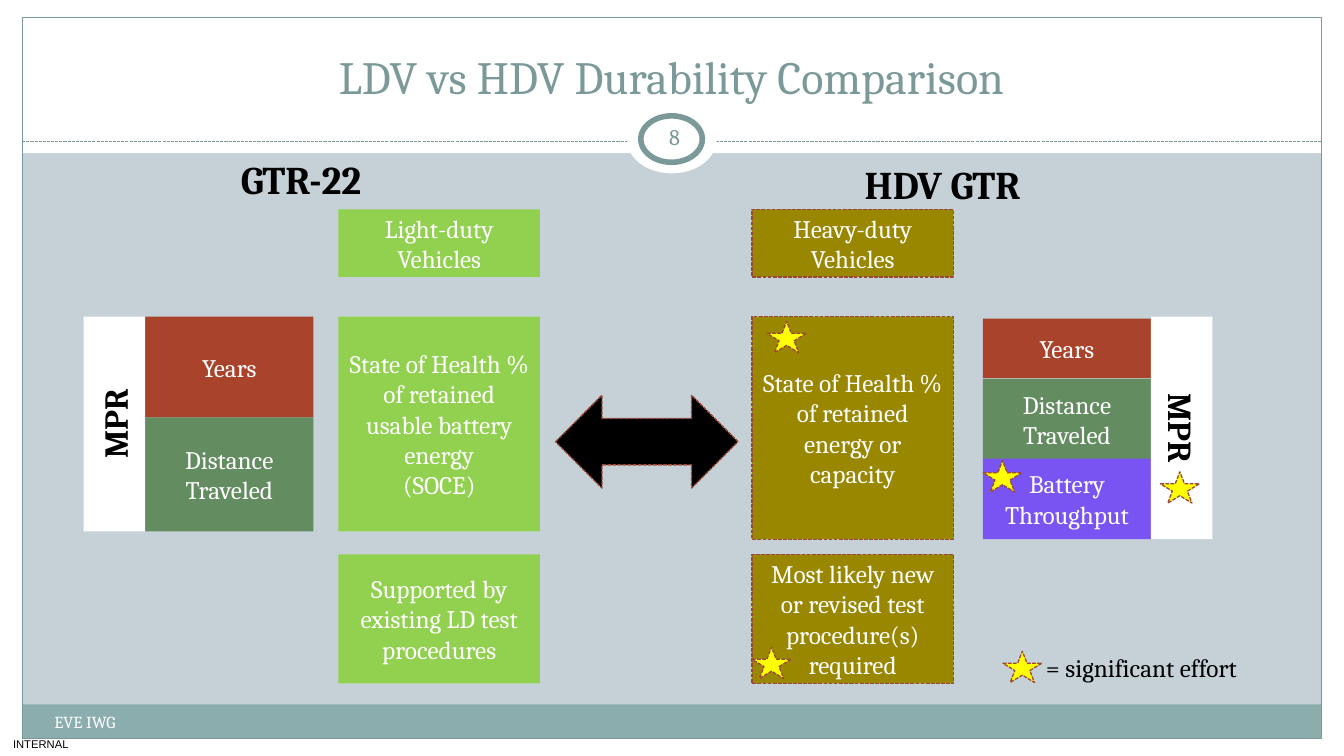
from dataclasses import dataclass

from lxml.etree import SubElement
from pptx import Presentation
from pptx.dml.color import RGBColor
from pptx.enum.dml import MSO_LINE
from pptx.enum.shapes import MSO_CONNECTOR, MSO_SHAPE
from pptx.enum.text import MSO_ANCHOR, MSO_AUTO_SIZE, PP_ALIGN
from pptx.oxml.ns import qn
from pptx.util import Cm, Pt


@dataclass(frozen=True)
class Theme:
    font: str = "Cambria"
    label_font: str = "Arial"
    backdrop: str = "C5D1D7"
    white: str = "FFFFFF"
    black: str = "000000"
    teal: str = "7C999A"
    band: str = "8CADAE"
    red: str = "A9432B"
    green: str = "648C61"
    purple: str = "7A54F2"
    light_duty: str = "92D050"
    heavy_duty: str = "998700"
    outline: str = "9B4936"
    star: str = "FFFF00"
    title_size: float = 33
    heading_size: float = 28
    mpr_size: float = 24
    body_size: float = 18
    number_size: float = 16
    footer_size: float = 12
    label_size: float = 8
    hairline: float = 0.75
    dash: float = 0.9
    ring: float = 4


class SlideBuilder:
    def __init__(self, slide, theme):
        self.slide = slide
        self.theme = theme
        slide.background.fill.solid()
        slide.background.fill.fore_color.rgb = RGBColor.from_string(theme.backdrop)

    def set_text(self, shape, text, size, color, bold=False, align=PP_ALIGN.CENTER,
                 anchor=MSO_ANCHOR.MIDDLE, font=None, wrap=True):
        frame = shape.text_frame
        frame.text = text
        frame.word_wrap = wrap
        frame.auto_size = MSO_AUTO_SIZE.NONE
        frame.vertical_anchor = anchor
        for paragraph in frame.paragraphs:
            paragraph.alignment = align
            for run in paragraph.runs:
                run.font.name = font or self.theme.font
                run.font.size = Pt(size)
                run.font.bold = bold
                run.font.color.rgb = RGBColor.from_string(color)

    def stroke(self, line, color, width, dashed):
        line.color.rgb = RGBColor.from_string(color)
        line.width = Pt(width)
        if dashed:
            line.dash_style = MSO_LINE.SQUARE_DOT

    def title(self, text, box):
        title = self.slide.shapes.title
        title.left, title.top, title.width, title.height = map(Cm, box)
        self.set_text(title, text, self.theme.title_size, self.theme.teal,
                      anchor=MSO_ANCHOR.BOTTOM)
        self.slide.shapes._spTree.append(title._element)

    def shape(self, kind, box, fill=None, line=None, width=None, dashed=False):
        shape = self.slide.shapes.add_shape(kind, *map(Cm, box))
        shape.shadow.inherit = False
        if fill:
            shape.fill.solid()
            shape.fill.fore_color.rgb = RGBColor.from_string(fill)
        else:
            shape.fill.background()
        if line:
            self.stroke(shape.line, line, width or self.theme.hairline, dashed)
        else:
            shape.line.fill.background()
        return shape

    def dashed_shape(self, kind, box, fill):
        return self.shape(kind, box, fill, self.theme.outline, self.theme.dash, True)

    def card(self, text, box, fill, dashed=False):
        draw = self.dashed_shape if dashed else self.shape
        self.set_text(draw(MSO_SHAPE.RECTANGLE, box, fill), text,
                      self.theme.body_size, self.theme.white)

    def mpr(self, box, rotation):
        bar = self.shape(MSO_SHAPE.RECTANGLE, box, self.theme.white)
        bar.rotation = rotation
        self.set_text(bar, "MPR", self.theme.mpr_size, self.theme.black, bold=True)

    def star(self, left, top):
        self.dashed_shape(MSO_SHAPE.STAR_5_POINT, (left, top, 0.99, 0.79), self.theme.star)

    def text(self, text, box, size, color, inset=None, **style):
        label = self.slide.shapes.add_textbox(*map(Cm, box))
        if inset is not None:
            frame = label.text_frame
            frame.margin_left = frame.margin_right = Cm(inset)
            frame.margin_top = frame.margin_bottom = Cm(inset)
        self.set_text(label, text, size, color, **style)

    def divider(self, left, right, top):
        line = self.slide.shapes.add_connector(
            MSO_CONNECTOR.STRAIGHT, Cm(left), Cm(top), Cm(right), Cm(top))
        self.stroke(line.line, self.theme.teal, self.theme.hairline, True)
        SubElement(line._element.spPr, qn("a:effectLst"))


def draw_frame(page, theme):
    for margin in ((0, 18.62, 33.87, 0.43), (0, 0, 33.87, 3.86),
                   (0, 0, 0.56, 19.05), (33.3, 0, 0.57, 19.05)):
        page.shape(MSO_SHAPE.RECTANGLE, margin, theme.white)
    page.shape(MSO_SHAPE.RECTANGLE, (0.56, 17.75, 32.74, 0.87), theme.band)
    page.shape(MSO_SHAPE.RECTANGLE, (0.56, 0.43, 32.74, 18.19), line=theme.teal)
    page.divider(0.56, 33.3, 3.56)
    page.shape(MSO_SHAPE.OVAL, (15.8, 2.67, 2.26, 1.7), theme.white)
    page.shape(MSO_SHAPE.OVAL, (16.15, 2.92, 1.55, 1.17), theme.white, theme.teal, theme.ring)
    page.text("INTERNAL", (0, 18.44, 2.06, 0.61), theme.label_size, theme.black,
              inset=0, font=theme.label_font, wrap=False)
    page.title("LDV vs HDV Durability Comparison", (1.12, 0.64, 31.6, 2.11))
    page.text("EVE IWG", (1.12, 17.81, 13.26, 1.02), theme.footer_size, theme.white,
              align=PP_ALIGN.LEFT, anchor=MSO_ANCHOR.TOP)
    page.text("8", (16.15, 2.84, 1.7, 1.22), theme.number_size, theme.teal, inset=0.13)


def draw_comparison(page, theme):
    vehicle_columns = (
        (8.53, theme.light_duty, False, 5.41,
         ("Light-duty Vehicles",
          "State of Health % of retained usable battery energy\n(SOCE)",
          "Supported by existing LD test procedures")),
        (18.95, theme.heavy_duty, True, 5.61,
         ("Heavy-duty Vehicles",
          "State of Health % of retained energy or capacity",
          "Most likely new or revised test procedure(s) required")),
    )
    for left, fill, dashed, health_height, texts in vehicle_columns:
        rows = ((5.28, 1.7), (7.98, health_height), (13.97, 3.25))
        for text, (top, height) in zip(texts, rows):
            page.card(text, (left, top, 5.08, height), fill, dashed)

    criteria = (
        ("Years", 3.66, 7.98, 2.54, theme.red),
        ("Distance Traveled", 3.66, 10.52, 2.87, theme.green),
        ("Years", 24.77, 8.03, 1.5, theme.red),
        ("Distance Traveled", 24.77, 9.55, 2.03, theme.green),
        ("Battery Throughput", 24.77, 11.56, 2.03, theme.purple),
    )
    for text, left, top, height, fill in criteria:
        page.card(text, (left, top, 4.24, height), fill)

    page.mpr((0.18, 9.91, 5.41, 1.55), 270)
    page.mpr((26.97, 10.01, 5.61, 1.55), 90)
    page.dashed_shape(MSO_SHAPE.LEFT_RIGHT_ARROW, (14, 9.96, 4.6, 2.34), theme.black)

    for heading, box in (("GTR-22", (5.82, 3.78, 4.42, 1.45)),
                         ("HDV GTR", (21.54, 3.91, 5.56, 1.45))):
        page.text(heading, box, theme.heading_size, theme.black, bold=True,
                  align=PP_ALIGN.LEFT, anchor=MSO_ANCHOR.TOP, wrap=False)

    for left, top in ((19.33, 8.1), (24.77, 11.61), (18.95, 16.31),
                      (29.24, 11.89), (25.27, 16.41)):
        page.star(left, top)
    page.text("= significant effort", (26.11, 16.31, 5.77, 1.02), theme.body_size,
              theme.black, align=PP_ALIGN.LEFT, anchor=MSO_ANCHOR.TOP, wrap=False)


def main():
    theme = Theme()
    deck = Presentation()
    deck.slide_width, deck.slide_height = Cm(33.87), Cm(19.05)
    page = SlideBuilder(deck.slides.add_slide(deck.slide_layouts[5]), theme)
    draw_frame(page, theme)
    draw_comparison(page, theme)
    deck.save("out.pptx")


if __name__ == "__main__":
    main()
